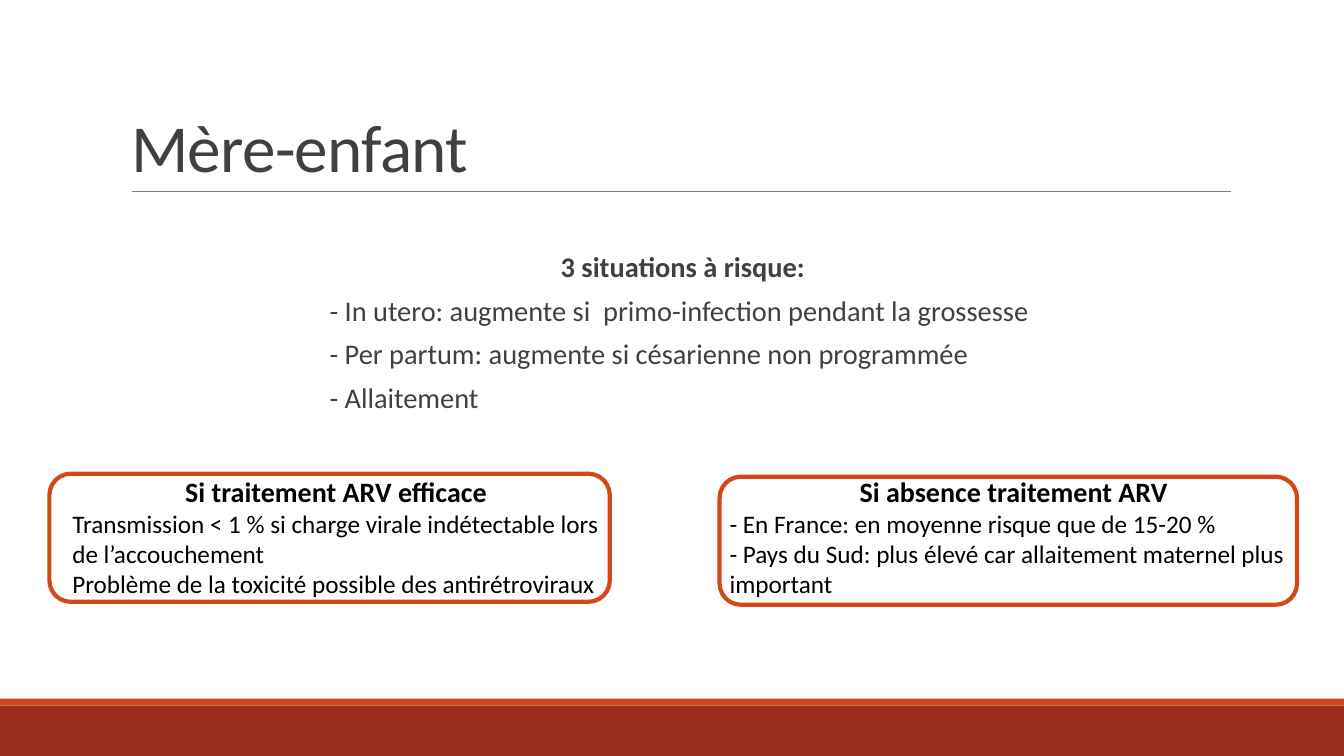
from dataclasses import dataclass

from lxml.etree import SubElement
from pptx import Presentation
from pptx.dml.color import RGBColor
from pptx.enum.shapes import MSO_CONNECTOR, MSO_SHAPE
from pptx.enum.text import MSO_ANCHOR, MSO_AUTO_SIZE, PP_ALIGN
from pptx.oxml.ns import qn
from pptx.util import Pt

BLACK = RGBColor(0x00, 0x00, 0x00)
DARK = RGBColor(0x40, 0x40, 0x40)
GREY = RGBColor(0x80, 0x80, 0x80)
ORANGE = RGBColor(0xD3, 0x48, 0x17)
RUST = RGBColor(0x9B, 0x2D, 0x1F)


@dataclass
class Box:
    left: float
    top: float
    width: float
    height: float

    def points(self) -> tuple:
        return tuple(Pt(n) for n in (self.left, self.top, self.width, self.height))


@dataclass
class Band:
    box: Box
    color: RGBColor


@dataclass
class Panel:
    frame: Box
    area: Box
    head: str
    lines: list[str]


BANDS = [
    Band(Box(0, 504, 960, 36), RUST),
    Band(Box(0, 499, 960, 5), ORANGE),
]
RISKS = [
    "- In utero: augmente si  primo-infection pendant la grossesse",
    "- Per partum: augmente si césarienne non programmée",
    "- Allaitement",
]
PANELS = [
    Panel(
        Box(514, 340.5, 412.5, 91.5),
        Box(514, 335.5, 420, 97),
        "Si absence traitement ARV",
        [
            "- En France: en moyenne risque que de 15-20 %",
            "- Pays du Sud: plus élevé car allaitement maternel plus important",
        ],
    ),
    Panel(
        Box(35.3, 338.4, 400.3, 91.5),
        Box(44.6, 335.5, 391, 97),
        "Si traitement ARV efficace",
        [
            "Transmission < 1 % si charge virale indétectable lors de l’accouchement",
            "Problème de la toxicité possible des antirétroviraux",
        ],
    ),
]


def format(target, values: dict) -> None:
    """Set each named attribute of the target."""
    for name, value in values.items():
        setattr(target, name, value)


def place(shape, box: Box) -> None:
    format(shape, dict(zip(("left", "top", "width", "height"), box.points())))


def write(par, text: str, size: float, color: RGBColor, bold: bool = False):
    run = par.add_run()
    run.text = text
    format(run.font, {"name": "Calibri", "size": Pt(size), "bold": bold})
    run.font.color.rgb = color
    return run


def fill_list(frame, head: str, lines: list[str], sizes: tuple, color: RGBColor) -> None:
    """Write a bold centred heading and plain lines below it."""
    for spot, text in enumerate([head, *lines]):
        first = spot == 0
        par = frame.paragraphs[0] if first else frame.add_paragraph()
        par.alignment = PP_ALIGN.CENTER if first else PP_ALIGN.LEFT
        write(par, text, sizes[0 if first else 1], color, first)


def add_band(slide, band: Band) -> None:
    shape = slide.shapes.add_shape(MSO_SHAPE.RECTANGLE, *band.box.points())
    shape.shadow.inherit = False
    shape.fill.solid()
    shape.fill.fore_color.rgb = band.color
    shape.line.fill.background()


def add_rule(slide) -> None:
    rule = slide.shapes.add_connector(
        MSO_CONNECTOR.STRAIGHT, Pt(94.3), Pt(136.8), Pt(879), Pt(136.8)
    )
    rule.line.width = Pt(0.5)
    rule.line.color.rgb = GREY
    SubElement(rule._element.spPr, qn("a:effectLst"))


def add_title(slide) -> None:
    title = slide.shapes.title
    place(title, Box(86.4, 22.3, 792, 114.5))
    format(title.text_frame, {
        "vertical_anchor": MSO_ANCHOR.BOTTOM,
        "auto_size": MSO_AUTO_SIZE.NONE,
        "word_wrap": True,
    })
    par = title.text_frame.paragraphs[0]
    format(par, {"alignment": PP_ALIGN.LEFT, "line_spacing": 0.85})
    run = write(par, "Mère-enfant", 48, DARK)
    run._r.get_or_add_rPr().set("spc", "-50")


def add_risks(slide) -> None:
    body = slide.placeholders[1]
    place(body, Box(235.4, 154.8, 504.7, 161.3))
    frame = body.text_frame
    format(frame, {
        "margin_left": 0,
        "margin_right": 0,
        "margin_top": Pt(30),
        "vertical_anchor": MSO_ANCHOR.TOP,
        "auto_size": MSO_AUTO_SIZE.NONE,
        "word_wrap": True,
    })
    fill_list(frame, "3 situations à risque:", RISKS, (20.3, 20.3), DARK)
    for par in frame.paragraphs:
        format(par, {
            "line_spacing": 0.7,
            "space_before": Pt(12),
            "space_after": Pt(2),
        })
        props = par._p.get_or_add_pPr()
        props.set("marL", str(Pt(7.2)))
        props.set("indent", str(Pt(-7.2)))
        SubElement(props, qn("a:buNone"))


def add_panel(slide, panel: Panel) -> None:
    text = slide.shapes.add_textbox(*panel.area.points())
    format(text.text_frame, {
        "word_wrap": True,
        "auto_size": MSO_AUTO_SIZE.SHAPE_TO_FIT_TEXT,
    })
    fill_list(text.text_frame, panel.head, panel.lines, (20, 18), BLACK)
    shape = slide.shapes.add_shape(MSO_SHAPE.ROUNDED_RECTANGLE, *panel.frame.points())
    shape.shadow.inherit = False
    shape.fill.background()
    shape.line.width = Pt(3)
    shape.line.color.rgb = ORANGE


def main() -> None:
    deck = Presentation()
    format(deck, {"slide_width": Pt(960), "slide_height": Pt(540)})
    slide = deck.slides.add_slide(deck.slide_layouts[1])
    for band in BANDS:
        add_band(slide, band)
    add_rule(slide)
    add_title(slide)
    add_risks(slide)
    for panel in PANELS:
        add_panel(slide, panel)
    deck.save("out.pptx")


if __name__ == "__main__":
    main()
